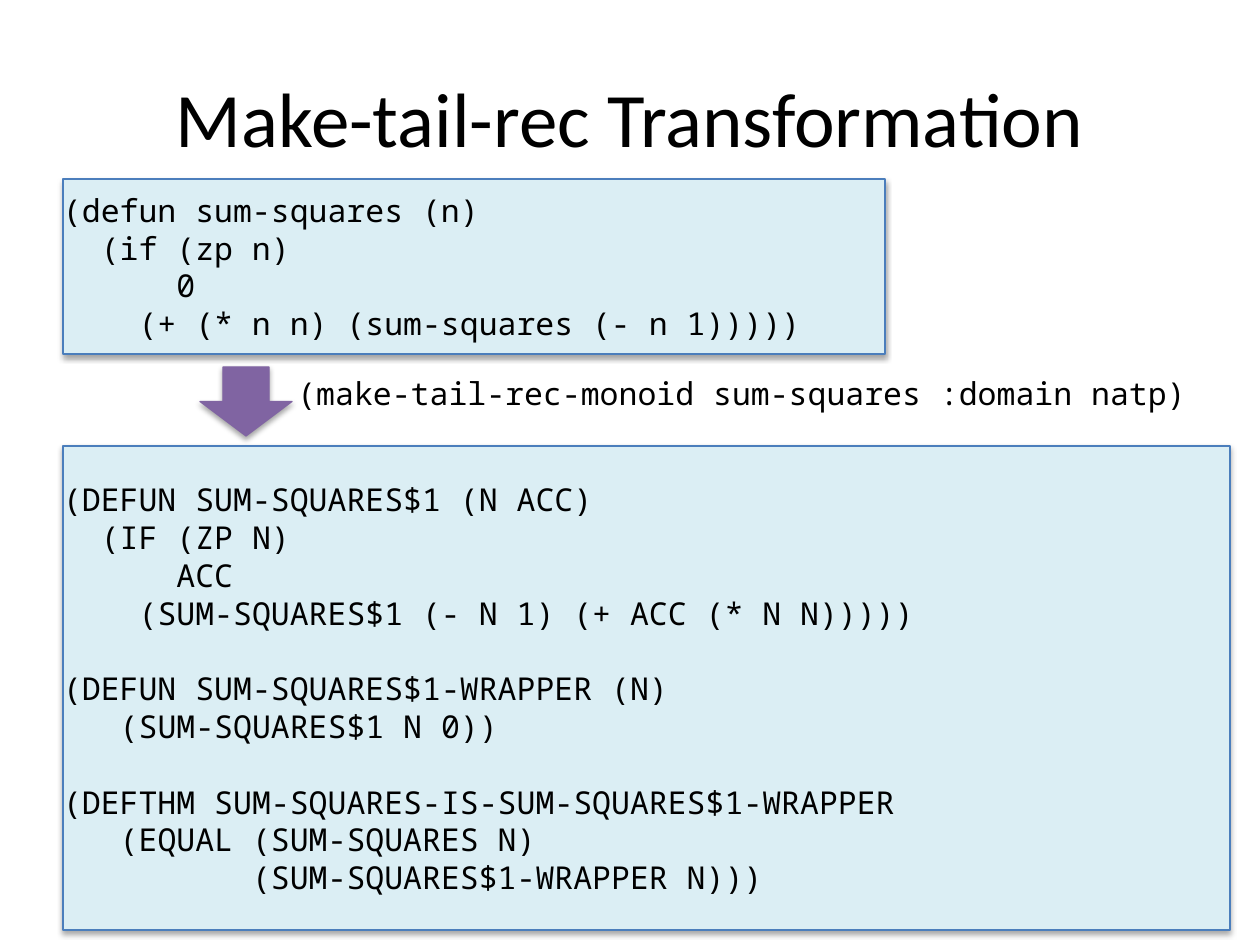
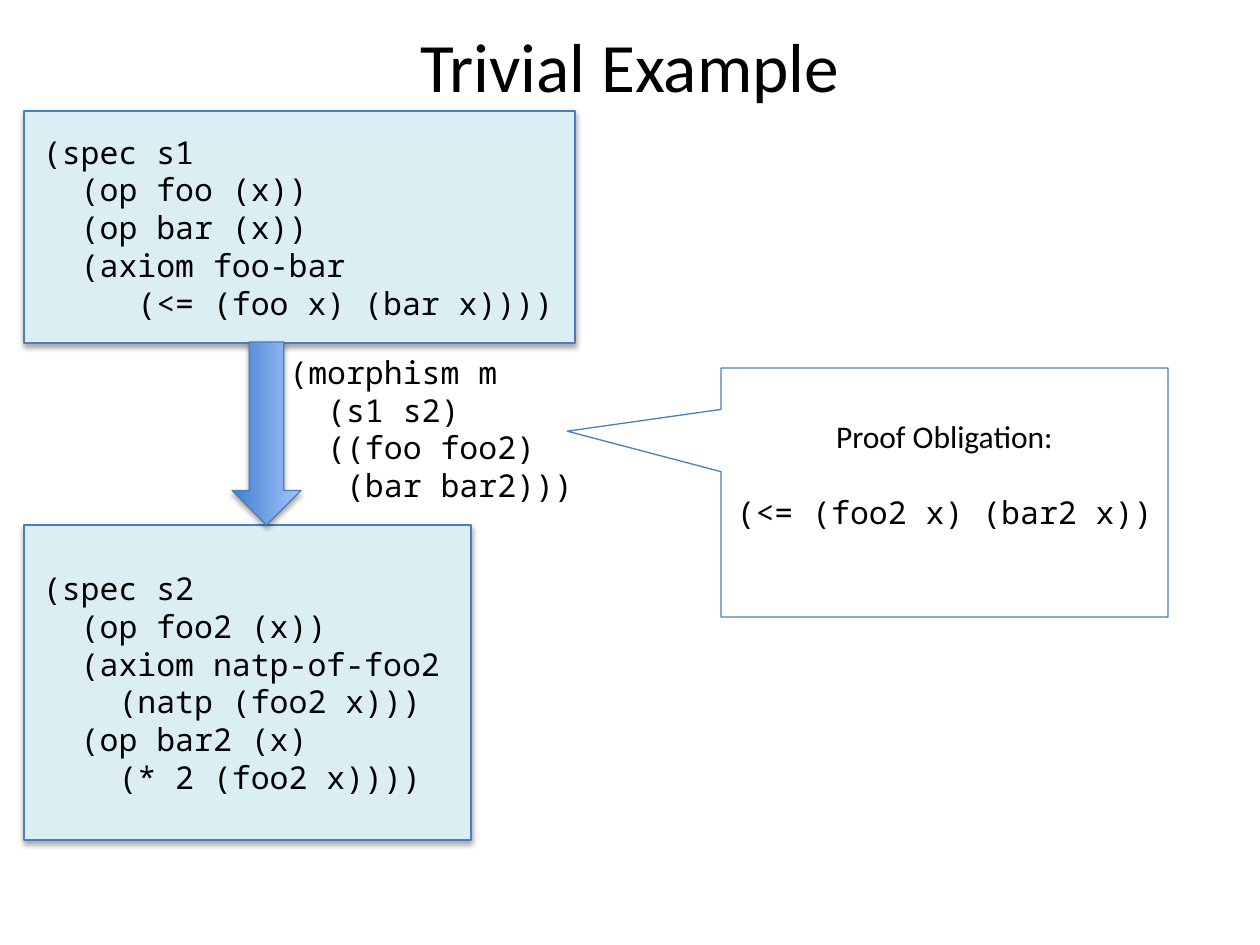
import dataclasses

import lxml.etree
import pptx
import pptx.dml.color
import pptx.enum.shapes
import pptx.enum.text
import pptx.oxml.ns
import pptx.util

PX = 914400 / 126
SLIDE_WIDTH, SLIDE_HEIGHT = 1260, 945
BLACK = pptx.dml.color.RGBColor(0x00, 0x00, 0x00)
PALE_BLUE = pptx.dml.color.RGBColor(0xDB, 0xEE, 0xF4)
OUTLINE_BLUE = pptx.dml.color.RGBColor(0x4B, 0x7E, 0xBC)
PURPLE = pptx.dml.color.RGBColor(0x80, 0x64, 0xA2)
GRADIENT_DARK = pptx.dml.color.RGBColor(0x3F, 0x80, 0xCE)
GRADIENT_LIGHT = pptx.dml.color.RGBColor(0xA4, 0xC4, 0xFF)
TITLE_FONT, CODE_FONT = "Calibri", "Noto Sans Mono"
TEXT_SIZE = 18
CHARACTER_WIDTH = 0.6 * TEXT_SIZE
LINE_HEIGHT = 1.2 * TEXT_SIZE
SHAPES = pptx.enum.shapes.MSO_SHAPE
ALIGN = pptx.enum.text.PP_ALIGN

SUM_SQUARES = """(defun sum-squares (n)
  (if (zp n)
      0
    (+ (* n n) (sum-squares (- n 1)))))"""
TAIL_RECURSIVE = """(DEFUN SUM-SQUARES$1 (N ACC)
  (IF (ZP N)
      ACC
    (SUM-SQUARES$1 (- N 1) (+ ACC (* N N)))))

(DEFUN SUM-SQUARES$1-WRAPPER (N)
   (SUM-SQUARES$1 N 0))

(DEFTHM SUM-SQUARES-IS-SUM-SQUARES$1-WRAPPER
   (EQUAL (SUM-SQUARES N)
          (SUM-SQUARES$1-WRAPPER N)))"""
SPEC_ONE = """ (spec s1
   (op foo (x))
   (op bar (x))
   (axiom foo-bar
      (<= (foo x) (bar x))))"""
SPEC_TWO = """ (spec s2
   (op foo2 (x))
   (axiom natp-of-foo2
     (natp (foo2 x)))
   (op bar2 (x)
     (* 2 (foo2 x))))"""
MORPHISM = """(morphism m
  (s1 s2)
  ((foo foo2)
   (bar bar2)))"""


def px(length):
    """Turn pixels into EMU."""
    return pptx.util.Emu(round(length * PX))


@dataclasses.dataclass
class Box:
    """A rectangle in pixels."""
    left: int
    top: int
    width: int
    height: int

    def inside(self, left, top, width, height):
        """Return a box placed relative to this one."""
        return Box(self.left + left, self.top + top, width, height)

    def emu(self):
        """Return the four lengths in EMU."""
        return [px(length) for length in dataclasses.astuple(self)]


def add_run(paragraph, text, font, size=TEXT_SIZE):
    """Append one black run to a paragraph."""
    run = paragraph.add_run()
    run.text = text
    run.font.name = font
    run.font.size = pptx.util.Pt(size)
    run.font.color.rgb = BLACK


def prepare_frame(shape):
    """Make the text of a shape wrap and sit in the middle."""
    frame = shape.text_frame
    frame.word_wrap = True
    frame.vertical_anchor = pptx.enum.text.MSO_ANCHOR.MIDDLE
    return frame


def write_code(frame, code):
    """Write code, turning its leading spaces into indents and empty lines into spacing."""
    paragraph = frame.paragraphs[0]
    gap = 0
    for number, line in enumerate(code.split("\n")):
        if not line:
            gap = LINE_HEIGHT
            continue
        if number:
            paragraph = frame.add_paragraph()
        text = line.lstrip()
        margin = pptx.util.Pt(CHARACTER_WIDTH * (len(line) - len(text)))
        properties = paragraph._p.get_or_add_pPr()
        properties.set("marL", str(int(margin)))
        properties.set("indent", "0")
        paragraph.alignment = ALIGN.LEFT
        paragraph.space_before = pptx.util.Pt(gap)
        add_run(paragraph, text, CODE_FONT)
        gap = 0


def add_soft_shadow(shape):
    """Give a shape a soft shadow below it."""
    effects = shape._element.spPr.find(pptx.oxml.ns.qn("a:effectLst"))
    shadow = lxml.etree.SubElement(effects, pptx.oxml.ns.qn("a:outerShdw"),
                                   blurRad="40000", dist="23000", dir="5400000", rotWithShape="0")
    color = lxml.etree.SubElement(shadow, pptx.oxml.ns.qn("a:srgbClr"), val=str(BLACK))
    lxml.etree.SubElement(color, pptx.oxml.ns.qn("a:alpha"), val="35000")


def add_outlined(slide, kind, box, fill=None, line=OUTLINE_BLUE):
    """Add a preset shape with a thin outline and an optional solid fill."""
    shape = slide.shapes.add_shape(kind, *box.emu())
    shape.shadow.inherit = False
    if fill is None:
        shape.fill.background()
    else:
        shape.fill.solid()
        shape.fill.fore_color.rgb = fill
    shape.line.color.rgb = line
    shape.line.width = pptx.util.Pt(0.75)
    return shape


def add_title(slide, box, text, size):
    """Add a centred slide title."""
    frame = prepare_frame(slide.shapes.add_textbox(*box.emu()))
    frame.paragraphs[0].alignment = ALIGN.CENTER
    add_run(frame.paragraphs[0], text, TITLE_FONT, size)


def add_code_panel(slide, box, code):
    """Add a pale panel that holds code."""
    panel = add_outlined(slide, SHAPES.RECTANGLE, box, PALE_BLUE)
    add_soft_shadow(panel)
    frame = prepare_frame(panel)
    frame.margin_left = frame.margin_right = 0
    write_code(frame, code)


def add_code_label(slide, box, code):
    """Add code without a panel."""
    write_code(prepare_frame(slide.shapes.add_textbox(*box.emu())), code)


def add_obligation_callout(slide, box):
    """Add the callout that states the proof obligation."""
    callout = add_outlined(slide, SHAPES.RECTANGULAR_CALLOUT, box)
    callout.adjustments[0] = -0.844
    callout.adjustments[1] = -0.246
    frame = prepare_frame(callout)
    frame.margin_bottom = px(43)
    heading = frame.paragraphs[0]
    formula = frame.add_paragraph()
    formula.space_before = pptx.util.Pt(LINE_HEIGHT)
    heading.alignment = formula.alignment = ALIGN.CENTER
    add_run(heading, "Proof Obligation:", TITLE_FONT)
    add_run(formula, "(<= (foo2 x) (bar2 x))", CODE_FONT)


def build_transformation(slide, box):
    """Show a function above its tail-recursive form."""
    add_title(slide, box.inside(0, -141, 1134, 158), "Make-tail-rec Transformation", 44)
    add_code_panel(slide, box.inside(0, 0, 822, 175), SUM_SQUARES)
    add_code_panel(slide, box.inside(0, 267, box.width, 484), TAIL_RECURSIVE)
    add_code_label(slide, box.inside(222, 160, 930, 108),
                   "(make-tail-rec-monoid sum-squares :domain natp)")
    arrow = add_outlined(slide, SHAPES.DOWN_ARROW, box.inside(137, 188, 92, 69), PURPLE, PURPLE)
    add_soft_shadow(arrow)


def build_example(slide, box):
    """Show two specs, the morphism between them and its obligation."""
    add_title(slide, box.inside(39, -93, 1134, 93), "Trivial Example", 39.6)
    add_code_panel(slide, box.inside(0, 0, 551, 232), SPEC_ONE)
    add_code_panel(slide, box.inside(0, 414, 447, 315), SPEC_TWO)
    add_code_label(slide, box.inside(253, 219, 404, 197), MORPHISM)
    arrow = add_outlined(slide, SHAPES.RIGHT_ARROW, box.inside(151, 288, 183, 69))
    arrow.rotation = 90
    arrow.fill.gradient()
    arrow.fill.gradient_angle = 90
    for stop, color in zip(arrow.fill.gradient_stops, (GRADIENT_DARK, GRADIENT_LIGHT)):
        stop.color.rgb = color
    add_soft_shadow(arrow)
    add_obligation_callout(slide, box.inside(697, 257, 447, 249))


def main():
    """Build and save the presentation."""
    presentation = pptx.Presentation()
    presentation.slide_width = px(SLIDE_WIDTH)
    presentation.slide_height = px(SLIDE_HEIGHT)
    blank = presentation.slide_layouts[6]
    build_transformation(presentation.slides.add_slide(blank), Box(63, 179, 1167, 751))
    build_example(presentation.slides.add_slide(blank), Box(24, 111, 1144, 729))
    presentation.save("out.pptx")


if __name__ == "__main__":
    main()
